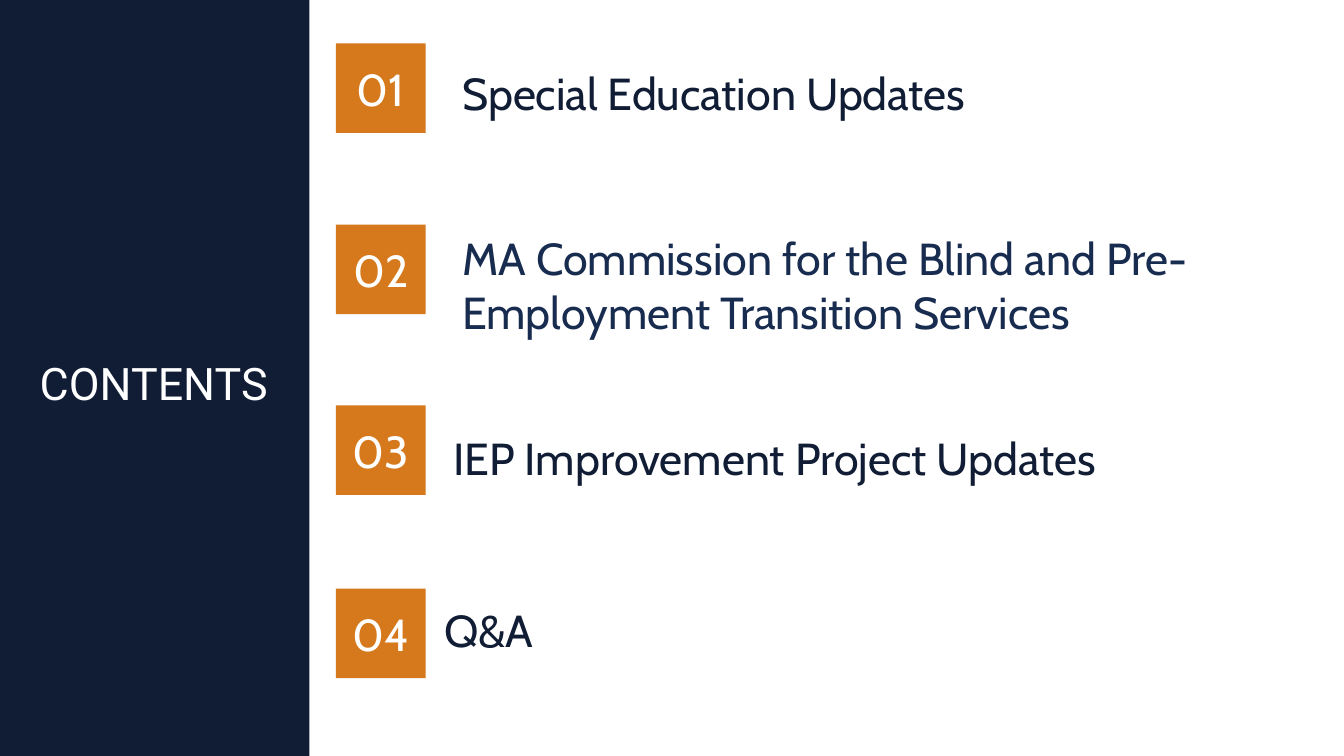
import pptx
import pptx.util
import pptx.dml.color
import pptx.enum.shapes
import pptx.enum.text

Pt = pptx.util.Pt
ALIGN = pptx.enum.text.PP_ALIGN

NAVY, BLUE, ORANGE, WHITE = "101D35", "182C50", "D6791C", "FFFFFF"
HEADING = "CONTENTS"
AGENDA = [
    {"topic": "Special Education Updates", "color": NAVY,
     "square_top": 31, "box": (324.7, 33.8, 622, 64)},
    {"topic": "MA Commission for the Blind and Pre-Employment Transition Services", "color": BLUE,
     "square_top": 160.5, "box": (324.7, 171.4, 628.6, 64)},
    {"topic": "IEP Improvement Project Updates", "color": NAVY,
     "square_top": 289.5, "box": (318.2, 295.2, 628.6, 64)},
    {"topic": "Q&A", "color": NAVY,
     "square_top": 420.5, "box": (311.8, 429.8, 622, 40.3)},
]
SQUARE_LEFT, SQUARE_SIZE = 240, 64
TEXT_INSET = 5.4


def rgb(value):
    return pptx.dml.color.RGBColor.from_string(value)


def add_rectangle(slide, box, color):
    shape = slide.shapes.add_shape(
        pptx.enum.shapes.MSO_SHAPE.RECTANGLE, *[Pt(length) for length in box])
    shape.shadow.inherit = False
    shape.fill.solid()
    shape.fill.fore_color.rgb = rgb(color)
    shape.line.fill.background()
    return shape


def write(shape, text, color, font="Cabin", align=ALIGN.LEFT, spacing=1.0):
    frame = shape.text_frame
    frame.word_wrap = True
    frame.vertical_anchor = pptx.enum.text.MSO_ANCHOR.MIDDLE
    frame.margin_left = frame.margin_right = Pt(TEXT_INSET)
    paragraph = frame.paragraphs[0]
    paragraph.text = text
    paragraph.alignment = align
    paragraph.line_spacing = spacing
    paragraph.font.name = font
    paragraph.font.size = Pt(32)
    paragraph.font.color.rgb = rgb(color)


def add_text(slide, box, text, color, **style):
    shape = slide.shapes.add_textbox(*[Pt(length) for length in box])
    write(shape, text, color, **style)


def main():
    presentation = pptx.Presentation()
    presentation.slide_width, presentation.slide_height = Pt(960), Pt(540)
    slide = presentation.slides.add_slide(presentation.slide_layouts[6])

    add_rectangle(slide, (0, 0, 221, 540), NAVY)
    add_text(slide, (23, 223.2, 198.7, 104.4), HEADING, WHITE, font="Roboto", spacing=0.9)

    for number, item in enumerate(AGENDA, start=1):
        square = add_rectangle(
            slide, (SQUARE_LEFT, item["square_top"], SQUARE_SIZE, SQUARE_SIZE), ORANGE)
        write(square, f"{number:02}", WHITE, align=ALIGN.CENTER)
        add_text(slide, item["box"], item["topic"], item["color"])

    presentation.save("out.pptx")


if __name__ == "__main__":
    main()
